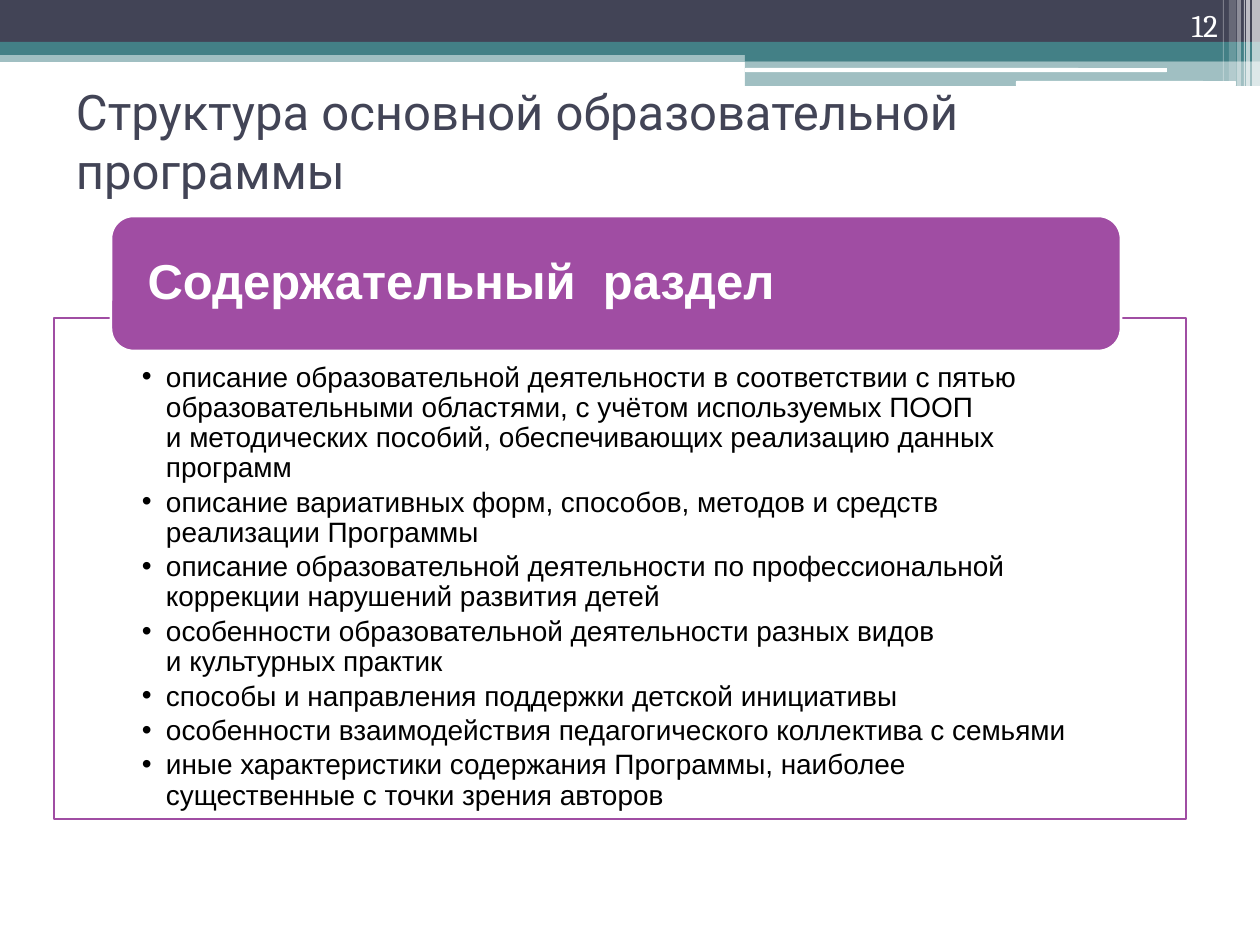
from lxml import etree
from pptx import Presentation
from pptx.dml.color import RGBColor
from pptx.enum.shapes import MSO_SHAPE
from pptx.enum.text import MSO_ANCHOR, MSO_AUTO_SIZE, PP_ALIGN
from pptx.oxml.ns import qn
from pptx.util import Pt

RECT, ROUNDED = MSO_SHAPE.RECTANGLE, MSO_SHAPE.ROUNDED_RECTANGLE
LEFT, RIGHT = PP_ALIGN.LEFT, PP_ALIGN.RIGHT
TOP, MIDDLE, BOTTOM = MSO_ANCHOR.TOP, MSO_ANCHOR.MIDDLE, MSO_ANCHOR.BOTTOM
EMU_PER_PX = 914400 / 126
NAVY, TEAL, PURPLE = "424456", "438086", "A04DA3"
WHITE, BLACK = "FFFFFF", "000000"

# Left, top, width, height, colour, opacity in percent
HEADER_BANDS = [
    (0, 50, 1260, 12, TEAL, 50),
    (0, 0, 1260, 42, NAVY, 100),
    (0, 42, 1260, 13, TEAL, 100),
    (745, 49, 515, 12, TEAL, 100),
    (745, 61, 515, 25, TEAL, 50),
]
HEADER_GAPS = [(745, 68, 422, 4), (1016, 81, 220, 5)]
# Left, width, height, opacity in percent
CORNER_STRIPES = [
    (1252, 8, 86, 65), (1246, 4, 86, 65), (1244, 1, 86, 60),
    (1237, 4, 86, 40), (1229, 7, 81, 20), (1223, 1, 81, 30),
]
SECTION_ITEMS = [
    "описание образовательной деятельности в соответствии с пятью "
    "образовательными областями, с учётом используемых ПООП\n"
    "и методических пособий, обеспечивающих реализацию данных программ",
    "описание вариативных форм, способов, методов и средств реализации Программы",
    "описание образовательной деятельности по профессиональной "
    "коррекции нарушений развития детей",
    "особенности образовательной деятельности разных видов\nи культурных практик",
    "способы и направления поддержки детской инициативы",
    "особенности взаимодействия педагогического коллектива с семьями",
    "иные характеристики содержания Программы, наиболее "
    "существенные с точки зрения авторов",
]


def px(length):
    return round(length * EMU_PER_PX)


def rgb(value):
    return RGBColor.from_string(value)


def add_box(slide, kind, box, color, opacity=100, outline=None):
    shape = slide.shapes.add_shape(kind, *map(px, box))
    shape.shadow.inherit = False
    shape.fill.solid()
    shape.fill.fore_color.rgb = rgb(color)
    if opacity < 100:
        fill_color = shape.fill._xPr.find(qn("a:solidFill"))[0]
        etree.SubElement(fill_color, qn("a:alpha"), val=str(opacity * 1000))
    if outline:
        shape.line.color.rgb = rgb(outline)
        shape.line.width = Pt(1.5)
    else:
        shape.line.fill.background()
    return shape


def add_bullet(paragraph, indent):
    properties = paragraph._p.get_or_add_pPr()
    properties.set("marL", str(px(indent)))
    properties.set("indent", str(-px(indent)))
    etree.SubElement(properties, qn("a:buFont"), typeface="Arial")
    etree.SubElement(properties, qn("a:buChar"), char="•")


def write(shape, lines, size, font, color, bold=False, align=LEFT, anchor=TOP,
          insets=(13, 6, 13, 6), spacing=None, after=0, bullet_indent=0):
    frame = shape.text_frame
    frame.word_wrap = True
    frame.auto_size = MSO_AUTO_SIZE.NONE
    frame.vertical_anchor = anchor
    (frame.margin_left, frame.margin_top,
     frame.margin_right, frame.margin_bottom) = map(px, insets)
    for index, line in enumerate(lines):
        paragraph = frame.add_paragraph() if index else frame.paragraphs[0]
        paragraph.text = line
        paragraph.alignment = align
        paragraph.space_after = Pt(after)
        if spacing:
            paragraph.line_spacing = spacing
        if bullet_indent:
            add_bullet(paragraph, bullet_indent)
        for run in paragraph.runs:
            run.font.size = Pt(size)
            run.font.name = font
            run.font.bold = bold
            run.font.color.rgb = rgb(color)
        # Line breaks carry their own text size
        for line_break in paragraph._p.findall(qn("a:br")):
            etree.SubElement(line_break, qn("a:rPr"), sz=str(size * 100))


def add_header(slide):
    for *box, color, opacity in HEADER_BANDS:
        add_box(slide, RECT, box, color, opacity)
    for box in HEADER_GAPS:
        add_box(slide, ROUNDED, box, WHITE)
    for left, width, height, opacity in CORNER_STRIPES:
        add_box(slide, RECT, (left, 0, width, height), WHITE, opacity)
    page_number = slide.shapes.add_textbox(*map(px, (1126, 0, 105, 50)))
    write(page_number, ["12"], 18, "Cambria", WHITE, align=RIGHT, anchor=BOTTOM)


def set_title(slide, text):
    title = slide.shapes.title
    title.left, title.top, title.width, title.height = map(px, (63, 66, 1134, 149))
    write(title, [text], 28, "Roboto", NAVY, anchor=MIDDLE)


def add_section(slide, heading, items):
    details = add_box(slide, RECT, (54, 318, 1132, 501), WHITE, 90, PURPLE)
    write(details, items, 16, "Arial", BLACK, insets=(88, 45, 88, 15),
          spacing=0.9, after=2.4, bullet_indent=24)
    banner = add_box(slide, ROUNDED, (111, 216, 1010, 135), PURPLE, outline=WHITE)
    write(banner, [heading], 28, "Arial", WHITE, bold=True, anchor=MIDDLE,
          insets=(30, 0, 30, 0), spacing=0.9)


def main():
    presentation = Presentation()
    presentation.slide_width, presentation.slide_height = px(1260), px(945)
    slide = presentation.slides.add_slide(presentation.slide_layouts[5])
    add_header(slide)
    set_title(slide, "Структура основной образовательной программы")
    add_section(slide, "Содержательный  раздел", SECTION_ITEMS)
    presentation.save("out.pptx")


if __name__ == "__main__":
    main()
